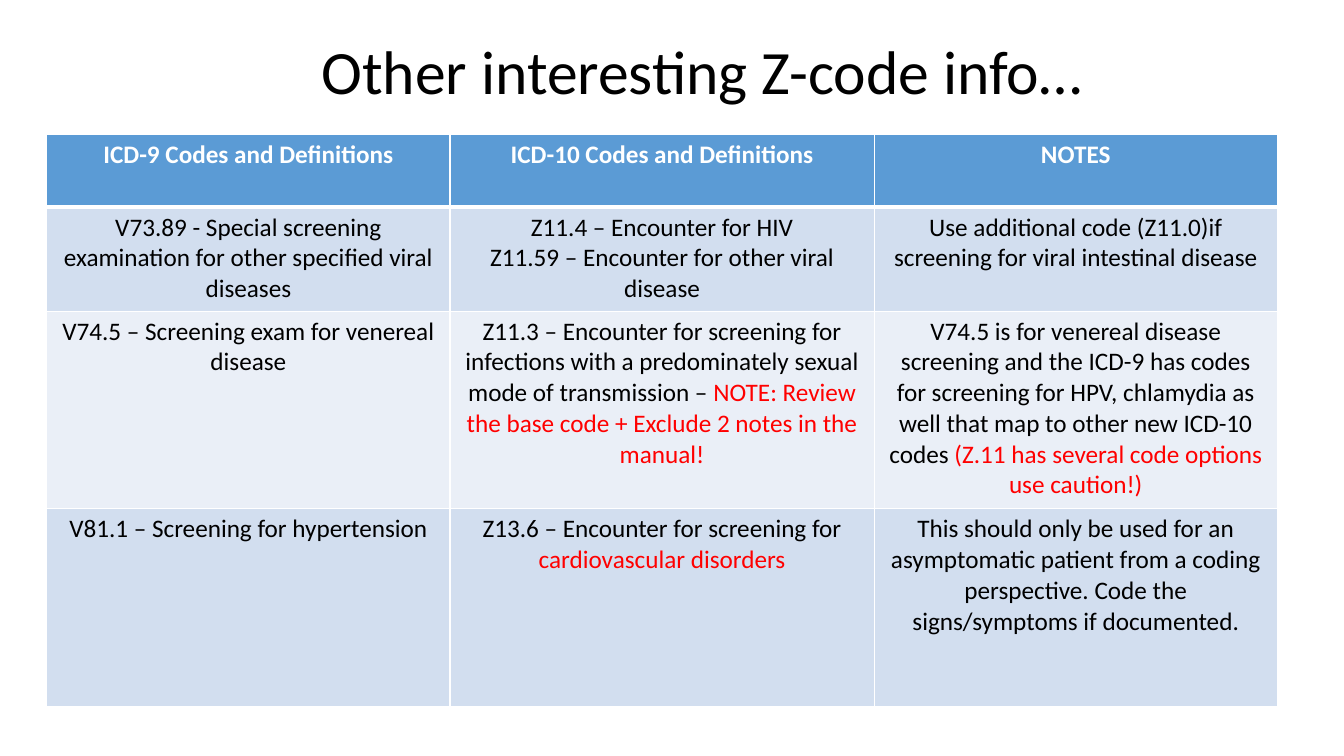
from dataclasses import dataclass

from lxml.etree import SubElement
from pptx import Presentation
from pptx.dml.color import RGBColor
from pptx.enum.text import MSO_ANCHOR as Anchor, PP_ALIGN as Align
from pptx.oxml.ns import qn
from pptx.util import Cm, Pt


@dataclass(frozen=True)
class Theme:
    font: str = "Calibri"
    title_size: int = 44
    table_size: int = 18
    ink: str = "000000"
    white: str = "FFFFFF"
    alert: str = "FF0000"
    header_fill: str = "5B9BD5"
    odd_fill: str = "D2DEEF"
    even_fill: str = "EAEFF7"
    rule: float = 1
    header_rule: float = 3


THEME = Theme()

TITLE = "Other interesting Z-code info…"
COLUMN_WIDTHS = (10.16, 10.69, 10.16)
ROW_HEIGHTS = (1.83, 2.62, 4.98, 4.98)

# Each cell is a list of paragraphs, each paragraph a tuple of runs;
# the second run of a paragraph is a warning
CODE_ROWS = [
    [
        [("ICD-9 Codes and Definitions",)],
        [("ICD-10 Codes and Definitions",)],
        [("NOTES",)],
    ],
    [
        [("V73.89 - Special screening examination for other specified viral diseases",)],
        [("Z11.4 – Encounter for HIV",),
         ("Z11.59 – Encounter for other viral disease",)],
        [("Use additional code (Z11.0)if screening for viral intestinal disease",)],
    ],
    [
        [("V74.5 – Screening exam for venereal disease",)],
        [("Z11.3 – Encounter for screening for infections with a predominately "
          "sexual mode of transmission – ",
          "NOTE: Review the base code + Exclude 2 notes in the manual!")],
        [("V74.5 is for venereal disease screening and the ICD-9 has codes for "
          "screening for HPV, chlamydia as well that map to other new ICD-10 codes ",
          "(Z.11 has several code options use caution!)")],
    ],
    [
        [("V81.1 – Screening for hypertension",)],
        [("Z13.6 – Encounter for screening for ", "cardiovascular disorders")],
        [("This should only be used for an asymptomatic patient from a coding "
          "perspective. Code the signs/symptoms if documented.",)],
    ],
]


def write_text(frame, paragraphs, *, size, color=THEME.ink, bold=False,
               align=Align.LEFT, line_spacing=1.0):
    """Fill a text frame; runs after the first in a paragraph are warnings."""
    for index, runs in enumerate(paragraphs):
        paragraph = frame.paragraphs[0] if index == 0 else frame.add_paragraph()
        paragraph.alignment = align
        paragraph.line_spacing = line_spacing
        for position, words in enumerate(runs):
            run = paragraph.add_run()
            run.text = words
            run.font.name = THEME.font
            run.font.size = Pt(size)
            run.font.bold = bold
            run.font.color.rgb = RGBColor.from_string(THEME.alert if position else color)


def add_title(slide):
    title = slide.shapes.add_textbox(Cm(7.85), Cm(0.71), Cm(23.42), Cm(2.36))
    frame = title.text_frame
    frame.word_wrap = True
    frame.vertical_anchor = Anchor.MIDDLE
    write_text(frame, [(TITLE,)], size=THEME.title_size, line_spacing=0.9)


def set_borders(cell, **widths):
    """Draw white cell borders; widths are in points, keyed L, R, T, B."""
    properties = cell._tc.get_or_add_tcPr()
    for side, width in widths.items():
        line = SubElement(properties, qn(f"a:ln{side}"), w=str(Pt(width)))
        fill = SubElement(line, qn("a:solidFill"))
        SubElement(fill, qn("a:srgbClr"), val=THEME.white)


def row_fill(row):
    if row == 0:
        return THEME.header_fill
    return THEME.odd_fill if row % 2 else THEME.even_fill


def add_code_table(slide):
    codes = slide.shapes.add_table(
        len(ROW_HEIGHTS), len(COLUMN_WIDTHS), Cm(1.18), Cm(3.39),
        Cm(sum(COLUMN_WIDTHS)), Cm(sum(ROW_HEIGHTS))).table
    for column, width in zip(codes.columns, COLUMN_WIDTHS):
        column.width = Cm(width)
    for row, height in zip(codes.rows, ROW_HEIGHTS):
        row.height = Cm(height)

    for row, entries in enumerate(CODE_ROWS):
        is_header = row == 0
        for column, paragraphs in enumerate(entries):
            cell = codes.cell(row, column)
            set_borders(cell, L=THEME.rule, R=THEME.rule,
                        T=THEME.header_rule if row == 1 else THEME.rule,
                        B=THEME.header_rule if is_header else THEME.rule)
            cell.fill.solid()
            cell.fill.fore_color.rgb = RGBColor.from_string(row_fill(row))
            write_text(cell.text_frame, paragraphs, size=THEME.table_size,
                       color=THEME.white if is_header else THEME.ink,
                       bold=is_header, align=Align.CENTER)


def main():
    deck = Presentation()
    deck.slide_width, deck.slide_height = Cm(33.87), Cm(19.05)
    slide = deck.slides.add_slide(deck.slide_layouts[6])

    # Heading, then the code comparison
    add_title(slide)
    add_code_table(slide)

    deck.save("out.pptx")


if __name__ == "__main__":
    main()
